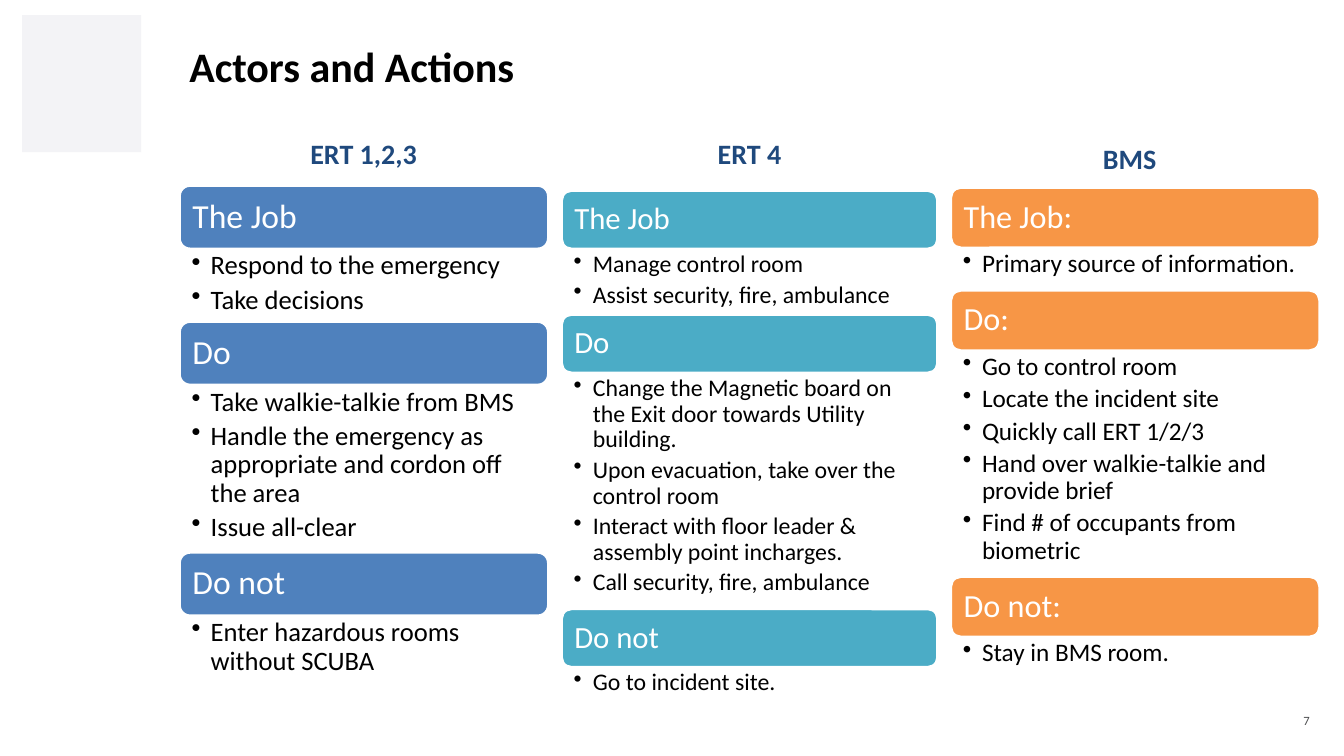
from dataclasses import dataclass

from lxml.etree import SubElement
from pptx import Presentation
from pptx.dml.color import RGBColor
from pptx.enum.shapes import MSO_SHAPE
from pptx.enum.text import MSO_ANCHOR, PP_ALIGN
from pptx.oxml.ns import qn
from pptx.util import Inches, Pt


@dataclass(frozen=True)
class Theme:
    font: str = "Calibri"
    black: str = "000000"
    white: str = "FFFFFF"
    heading: str = "1F497D"
    blue: str = "4F81BD"
    teal: str = "4BACC6"
    orange: str = "F79646"
    block: str = "F3F3F6"
    number: str = "4C4D4F"
    title_size: int = 30
    heading_size: int = 20
    number_size: int = 9


@dataclass(frozen=True)
class Column:
    heading: str
    heading_box: tuple  # left, top, width
    left: float
    top: float
    width: float
    bar_height: float
    color: str
    bar_size: int
    body_size: int
    right_inset: float
    sections: tuple  # bar label, body height, bullet items


THEME = Theme()

COLUMNS = (
    Column("ERT 1,2,3", (2.98, 1.31, 1.27), 1.78, 1.84, 3.66, 0.63, THEME.blue, 24, 19, 0.19, (
        ("The Job", 0.72, ("Respond to the emergency", "Take decisions")),
        ("Do", 1.66, ("Take walkie-talkie from BMS",
                      "Handle the emergency as appropriate and cordon off the area",
                      "Issue all-clear")),
        ("Do not", 0.65, ("Enter hazardous rooms without SCUBA",)),
    )),
    Column("ERT 4", (7.02, 1.31, 0.83), 5.57, 1.89, 3.73, 0.58, THEME.teal, 22, 17, 0.17, (
        ("The Job", 0.65, ("Manage control room", "Assist security, fire, ambulance")),
        ("Do", 2.34, ("Change the Magnetic board on the Exit door towards Utility building.",
                      "Upon evacuation, take over the control room",
                      "Interact with floor leader & assembly point incharges.",
                      "Call security, fire, ambulance")),
        ("Do not", 0.4, ("Go to incident site.",)),
    )),
    Column("BMS", (10.84, 1.35, 0.74), 9.43, 1.86, 3.66, 0.6, THEME.orange, 23, 18, 0.18, (
        ("The Job:", 0.42, ("Primary source of information.",)),
        ("Do:", 2.24, ("Go to control room", "Locate the incident site",
                       "Quickly call ERT 1/2/3",
                       "Hand over walkie-talkie and provide brief",
                       "Find # of occupants from biometric")),
        ("Do not:", 0.42, ("Stay in BMS room.",)),
    )),
)


def style_font(para, size, color, bold=False):
    para.font.name = THEME.font
    para.font.size = Pt(size)
    para.font.bold = bold
    para.font.color.rgb = RGBColor.from_string(color)


def set_margins(frame, left, top, right, bottom):
    frame.margin_left, frame.margin_top = Inches(left), Inches(top)
    frame.margin_right, frame.margin_bottom = Inches(right), Inches(bottom)


def add_block(page, preset, left, top, width, height, color):
    block = page.shapes.add_shape(preset, Inches(left), Inches(top), Inches(width), Inches(height))
    block.shadow.inherit = False
    block.fill.solid()
    block.fill.fore_color.rgb = RGBColor.from_string(color)
    block.line.fill.background()
    return block


def add_label(page, text, left, top, width, height, size, color,
              bold=False, align=PP_ALIGN.LEFT, anchor=MSO_ANCHOR.MIDDLE, wrap=True):
    box = page.shapes.add_textbox(Inches(left), Inches(top), Inches(width), Inches(height))
    frame = box.text_frame
    frame.word_wrap = wrap
    frame.vertical_anchor = anchor
    frame.text = text
    para = frame.paragraphs[0]
    para.alignment = align
    style_font(para, size, color, bold)


def add_bar(page, column, top, label):
    bar = add_block(page, MSO_SHAPE.ROUNDED_RECTANGLE, column.left, top,
                    column.width, column.bar_height, column.color)
    bar.line.color.rgb = RGBColor.from_string(THEME.white)
    bar.line.width = Pt(2)
    frame = bar.text_frame
    set_margins(frame, 0.1, 0.1, 0.1, 0.1)
    frame.vertical_anchor = MSO_ANCHOR.MIDDLE
    frame.text = label
    para = frame.paragraphs[0]
    para.alignment = PP_ALIGN.LEFT
    para.line_spacing = 0.9
    style_font(para, column.bar_size, THEME.white)


def add_bullets(page, column, top, height, items):
    box = page.shapes.add_textbox(Inches(column.left), Inches(top),
                                  Inches(column.width), Inches(height))
    frame = box.text_frame
    frame.word_wrap = True
    set_margins(frame, 0.12, 0.03, column.right_inset, 0.03)
    frame.text = "\n".join(items)
    for para in frame.paragraphs:
        para.line_spacing = 0.9
        para.space_after = Pt(round(0.2 * column.body_size, 1))
        properties = para._p.get_or_add_pPr()
        properties.set("marL", str(Inches(0.19)))
        properties.set("indent", str(Inches(-0.19)))
        SubElement(properties, qn("a:buChar")).set("char", "•")
        style_font(para, column.body_size, THEME.black)


def add_column(page, column):
    left, top, width = column.heading_box
    add_label(page, column.heading, left, top, width, 0.44, THEME.heading_size,
              THEME.heading, bold=True, anchor=MSO_ANCHOR.TOP, wrap=False)
    # Bars and bullet lists stack downwards without gaps
    top = column.top
    for label, body_height, items in column.sections:
        add_bar(page, column, top, label)
        top += column.bar_height
        add_bullets(page, column, top, body_height, items)
        top += body_height


def main():
    deck = Presentation()
    deck.slide_width, deck.slide_height = Inches(13.33), Inches(7.5)
    page = deck.slides.add_slide(deck.slide_layouts[6])

    # Corner block and title
    add_block(page, MSO_SHAPE.RECTANGLE, 0.22, 0.15, 1.18, 1.36, THEME.block)
    add_label(page, "Actors and Actions", 1.78, 0.15, 11.3, 1.01,
              THEME.title_size, THEME.black, bold=True)

    # One column per actor
    for column in COLUMNS:
        add_column(page, column)

    # Page number
    add_label(page, "7", 11.63, 6.95, 1.46, 0.4, THEME.number_size,
              THEME.number, align=PP_ALIGN.RIGHT)

    deck.save("out.pptx")


if __name__ == "__main__":
    main()
